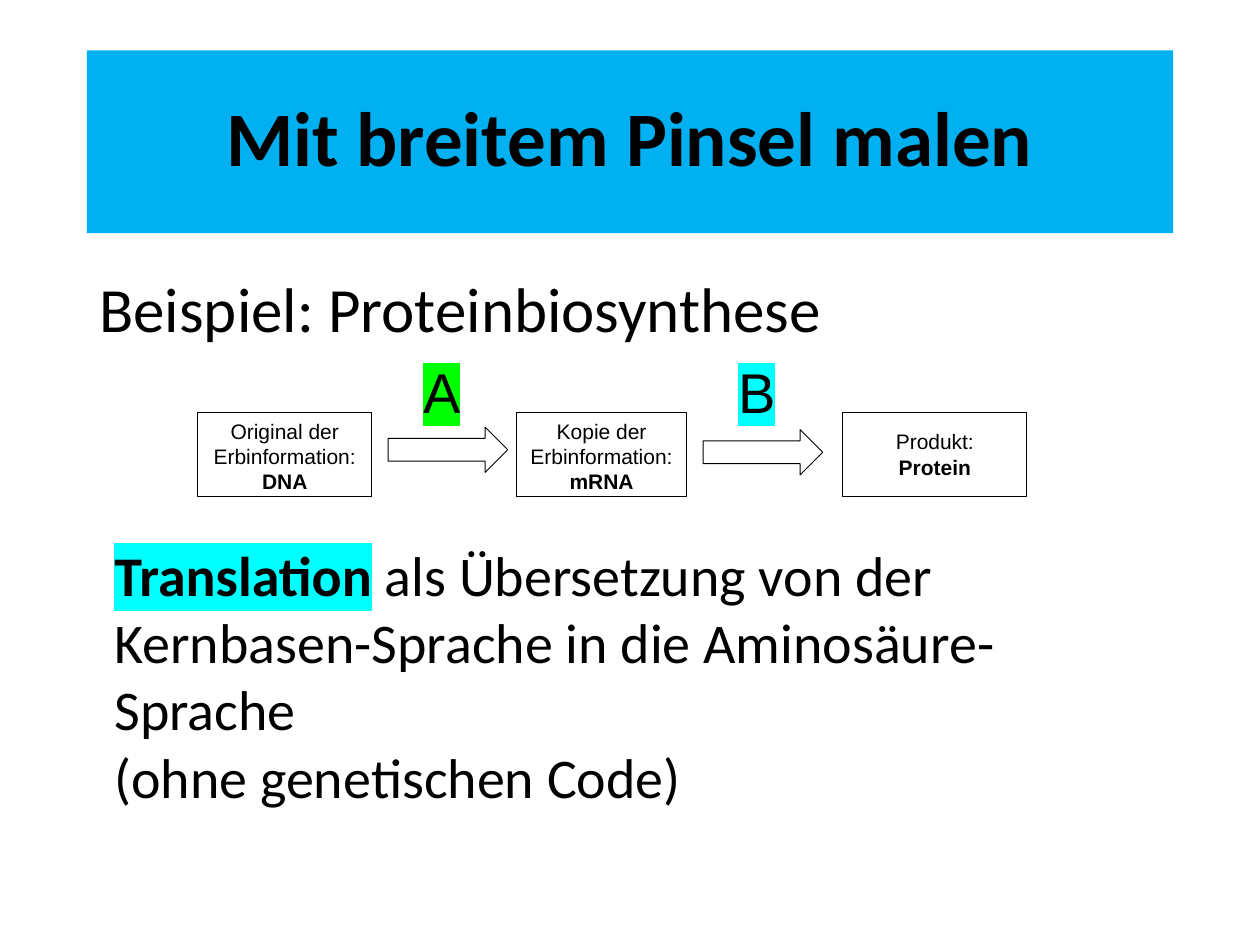
from dataclasses import dataclass

from lxml import etree
from pptx import Presentation
from pptx import util as u
from pptx.dml.color import RGBColor
from pptx.enum import shapes, text
from pptx.oxml.ns import qn


@dataclass(frozen=True)
class Theme:
    ink: str = "000000"
    paper: str = "FFFFFF"
    banner: str = "00B0F0"
    green: str = "00FF00"
    cyan: str = "00FFFF"
    body_font: str = "Calibri"
    diagram_font: str = "Arial"
    title: int = 44
    heading: int = 36
    body: int = 32
    box: int = 12
    line: float = 0.5


THEME = Theme()


def rgb(value):
    return RGBColor.from_string(value)


def place(sp, left, top, width, height):
    sp.left, sp.top = u.Inches(left), u.Inches(top)
    sp.width, sp.height = u.Inches(width), u.Inches(height)


def highlight(r, color):
    mark = etree.Element(qn("a:highlight"))
    etree.SubElement(mark, qn("a:srgbClr"), val=color)
    r.font._element.find(qn("a:solidFill")).addnext(mark)


def add_run(p, content, font, size, bold=False, mark=None):
    r = p.add_run()
    r.text = content
    r.font.name, r.font.size, r.font.bold = font, u.Pt(size), bold
    r.font.color.rgb = rgb(THEME.ink)
    if mark:
        highlight(r, mark)


def fill_text(tf, paragraphs, font, size, align=text.PP_ALIGN.LEFT):
    tf.word_wrap = True
    for i, runs in enumerate(paragraphs):
        p = tf.add_paragraph() if i else tf.paragraphs[0]
        p.alignment = align
        for run in runs:
            add_run(p, run[0], font, size, *run[1:])


def add_title(s, content):
    sp = s.shapes.title
    place(sp, 0.69, 0.4, 8.62, 1.45)
    sp.fill.solid()
    sp.fill.fore_color.rgb = rgb(THEME.banner)
    tf = sp.text_frame
    tf.vertical_anchor = text.MSO_ANCHOR.MIDDLE
    fill_text(tf, [[(content, True)]], THEME.body_font, THEME.title,
              text.PP_ALIGN.CENTER)
    tf.paragraphs[0].line_spacing = 0.9


def add_text(s, at, paragraphs, font, size):
    tf = s.shapes.add_textbox(*map(u.Inches, at)).text_frame
    fill_text(tf, paragraphs, font, size)
    return tf


def add_outlined(s, kind, at):
    sp = s.shapes.add_shape(kind, *map(u.Inches, at))
    sp.shadow.inherit = False
    sp.line.color.rgb = rgb(THEME.ink)
    sp.line.width = u.Pt(THEME.line)
    return sp


def add_box(s, left, width, paragraphs, anchor):
    sp = add_outlined(s, shapes.MSO_SHAPE.RECTANGLE, (left, 3.27, width, 0.67))
    sp.fill.solid()
    sp.fill.fore_color.rgb = rgb(THEME.paper)
    sp.text_frame.vertical_anchor = anchor
    fill_text(sp.text_frame, paragraphs, THEME.diagram_font, THEME.box,
              text.PP_ALIGN.CENTER)


def add_arrow(s, left, top):
    sp = add_outlined(s, shapes.MSO_SHAPE.RIGHT_ARROW, (left, top, 0.95, 0.36))
    sp.fill.background()


def add_step_labels(s):
    labels = [[("A", False, THEME.green), ("\t",), ("B", False, THEME.cyan)]]
    tf = add_text(s, (3.26, 2.79, 3.08, 0.42), labels,
                  THEME.diagram_font, THEME.body)
    tabs = etree.SubElement(tf.paragraphs[0]._p.get_or_add_pPr(), qn("a:tabLst"))
    etree.SubElement(tabs, qn("a:tab"), pos=str(u.Inches(2.5)), algn="l")


def main():
    prs = Presentation()
    prs.slide_width, prs.slide_height = u.Inches(10), u.Inches(7.5)
    s = prs.slides.add_slide(prs.slide_layouts[5])

    add_title(s, "Mit breitem Pinsel malen")
    add_text(s, (0.69, 2.09, 8.62, 0.71), [[("Beispiel: Proteinbiosynthese",)]],
             THEME.body_font, THEME.heading)

    top, middle = text.MSO_ANCHOR.TOP, text.MSO_ANCHOR.MIDDLE
    add_box(s, 1.57, 1.38,
            [[("Original der Erbinformation: ",), ("DNA", True)]], top)
    add_box(s, 4.1, 1.35,
            [[("Kopie der Erbinformation:",)], [("mRNA", True)]], top)
    add_box(s, 6.69, 1.46, [[("Produkt:",)], [("Protein", True)]], middle)
    add_arrow(s, 3.08, 3.39)
    add_arrow(s, 5.58, 3.41)

    add_text(s, (0.81, 4.24, 8.39, 2.26), [
        [("Translation", True, THEME.cyan),
         (" als Übersetzung von der Kernbasen-Sprache in die Aminosäure-Sprache",)],
        [("(ohne genetischen Code)",)],
    ], THEME.body_font, THEME.body)
    add_step_labels(s)
    prs.save("out.pptx")


if __name__ == "__main__":
    main()
